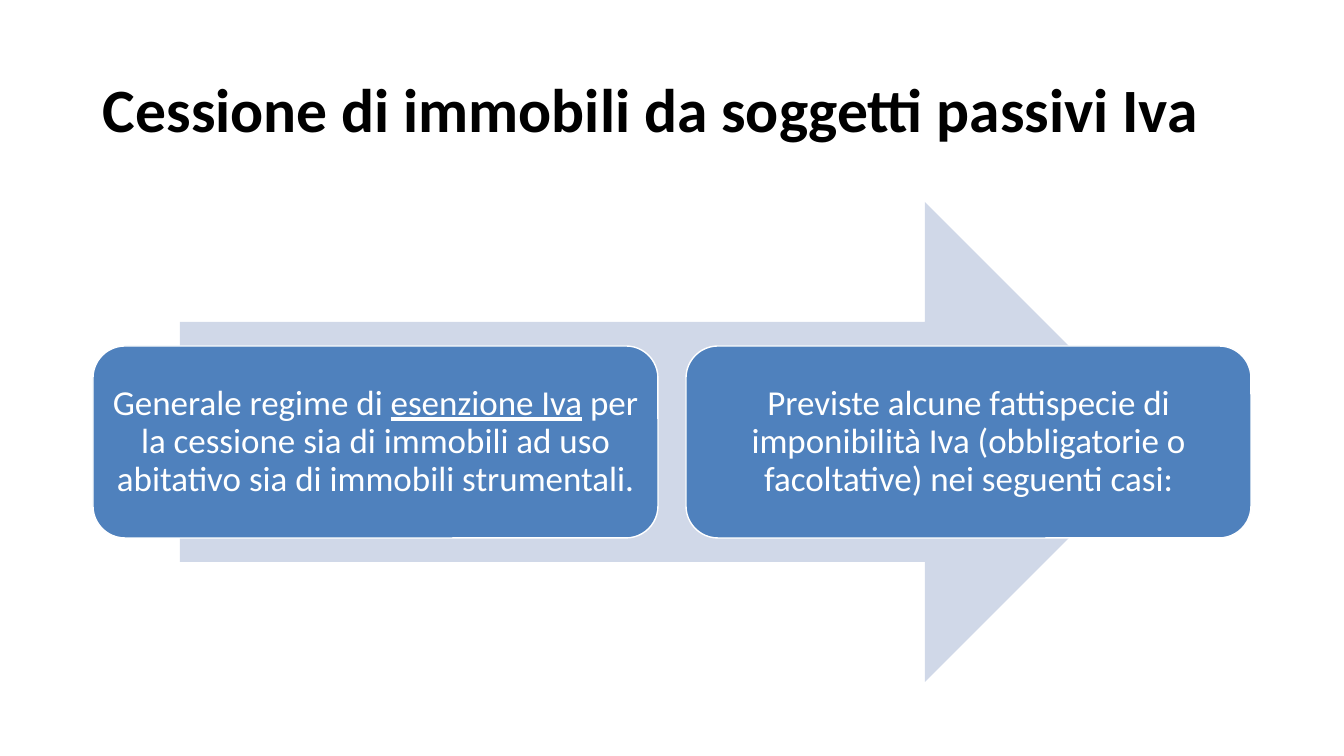
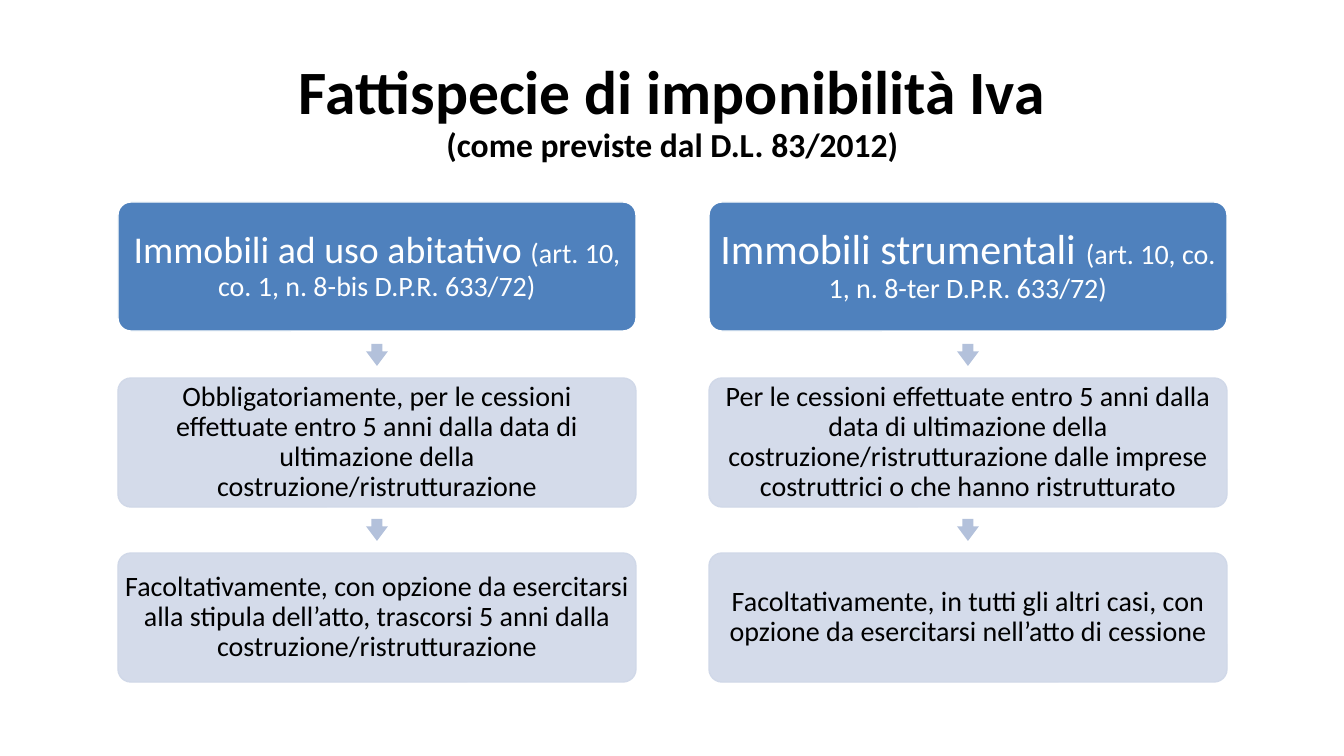
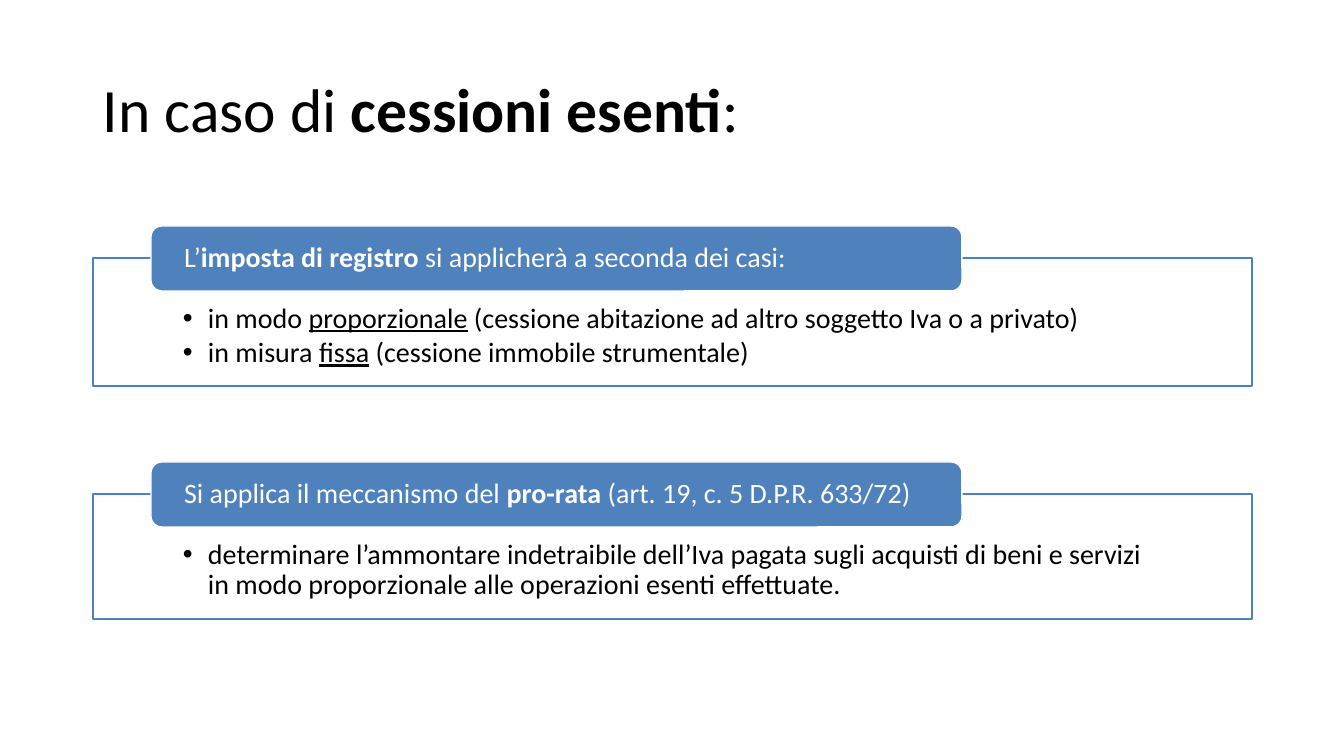
from dataclasses import dataclass

from lxml.etree import SubElement
from pptx import Presentation
from pptx.dml.color import RGBColor
from pptx.enum.shapes import MSO_SHAPE
from pptx.enum.text import MSO_ANCHOR, MSO_AUTO_SIZE, PP_ALIGN
from pptx.oxml.ns import qn
from pptx.util import Pt

EMU_PER_PX = 12192000 / 1344
PAGE_WIDTH, PAGE_HEIGHT = 1344, 756
TITLE_ONLY = 5

BLACK = RGBColor(0x00, 0x00, 0x00)
WHITE = RGBColor(0xFF, 0xFF, 0xFF)
BLUE = RGBColor(0x4F, 0x81, 0xBD)
PALE_BLUE = RGBColor(0xD0, 0xD8, 0xE8)
ARROW_BLUE = RGBColor(0xB3, 0xC1, 0xDB)

FONT = "Calibri"
BOLD = {"bold": True}
UNDERLINED = {"underline": True}


@dataclass
class Box:
    left: int
    top: int
    width: int
    height: int

    def emu(self):
        return [px(side) for side in (self.left, self.top, self.width, self.height)]


TITLE_BOX = Box(93, 40, 1159, 146)
BODY_BOX = Box(93, 202, 1159, 480)
COLUMNS_BOX = Box(118, 202, 1109, 480)


def px(length):
    return round(length * EMU_PER_PX)


def apply(target, values):
    for name, value in values.items():
        setattr(target, name, value)


def set_opacity(color_format_parent, percent):
    for color in color_format_parent.iter(qn("a:srgbClr")):
        SubElement(color, qn("a:alpha"), val=str(percent * 1000))


def write_spans(para, spans, size, color, align):
    """Fill a paragraph; a span is a text, a (text, font values) pair or a line break."""
    apply(para, {"alignment": align, "line_spacing": 0.9})
    for span in spans:
        if span == "\n":
            para.add_line_break()
            continue
        text, values = (span, {}) if isinstance(span, str) else span
        run = para.add_run()
        run.text = text
        apply(run.font, {"name": FONT, "size": Pt(size), **values})
        run.font.color.rgb = color


def set_frame(frame, margins, anchor=MSO_ANCHOR.MIDDLE):
    left, top, right, bottom = (px(margin) for margin in margins)
    apply(frame, {
        "word_wrap": True, "auto_size": MSO_AUTO_SIZE.NONE, "vertical_anchor": anchor,
        "margin_left": left, "margin_top": top,
        "margin_right": right, "margin_bottom": bottom,
    })


def add_bullet(para):
    properties = para._p.get_or_add_pPr()
    properties.set("marL", str(px(25)))
    properties.set("indent", str(-px(25)))
    SubElement(properties, qn("a:buFont"), typeface="Arial")
    SubElement(properties, qn("a:buChar"), char="•")


def add_figure(page, kind, box, fill, line=None, adjustments=(), opacity=100):
    figure = page.shapes.add_shape(kind, *box.emu())
    figure.shadow.inherit = False
    figure.fill.solid()
    figure.fill.fore_color.rgb = fill
    if line is None:
        figure.line.fill.background()
    else:
        figure.line.color.rgb = line
        figure.line.width = Pt(1)
    for index, value in enumerate(adjustments):
        figure.adjustments[index] = value
    if opacity < 100:
        set_opacity(figure.fill._xPr.find(qn("a:solidFill")), opacity)
    return figure


def add_card(page, box, spans, size, margins, color=WHITE, align=PP_ALIGN.CENTER, **look):
    """Add a rounded box with one paragraph, blue with a white edge by default."""
    look = {"fill": BLUE, "line": WHITE, **look}
    card = add_figure(page, MSO_SHAPE.ROUNDED_RECTANGLE, box, **look)
    set_frame(card.text_frame, margins)
    write_spans(card.text_frame.paragraphs[0], spans, size, color, align)


def add_page(deck, title_spans, align=PP_ALIGN.LEFT):
    page = deck.slides.add_slide(deck.slide_layouts[TITLE_ONLY])
    title = page.shapes.title
    apply(title, dict(zip(("left", "top", "width", "height"), TITLE_BOX.emu())))
    set_frame(title.text_frame, (10, 5, 10, 5))
    write_spans(title.text_frame.paragraphs[0], title_spans, 44, BLACK, align)
    return page


def add_arrow_process(page, box, steps):
    """Lay equal cards in a row across a wide arrow."""
    inset, gap = round(box.width * 0.075), 28
    add_figure(page, MSO_SHAPE.RIGHT_ARROW,
               Box(box.left + inset, box.top, box.width - 2 * inset, box.height), PALE_BLUE)
    width = (box.width - gap * (len(steps) - 1)) // len(steps)
    height = round(box.height * 0.4)
    top = box.top + (box.height - height) // 2
    for index, spans in enumerate(steps):
        left = box.left + index * (width + gap)
        add_card(page, Box(left, top, width, height), spans, 25, (10, 10, 10, 10))


def add_column(page, box, heading, steps):
    """Stack a heading and its steps, with a small arrow in each gap."""
    height, arrow = 129, 22
    gap = (box.height - height * (len(steps) + 1)) / len(steps)
    add_card(page, Box(box.left, box.top, box.width, height), heading, 20, (4, 4, 4, 4),
             adjustments=[0.1])
    for index, text in enumerate(steps, start=1):
        top = round(box.top + index * (height + gap))
        add_figure(page, MSO_SHAPE.DOWN_ARROW,
                   Box(box.left + (box.width - arrow) // 2,
                       round(top - (gap + arrow) / 2), arrow, arrow),
                   ARROW_BLUE, adjustments=[0.5, 0.667])
        add_card(page, Box(box.left, top, box.width, height), [text], 20, (3, 3, 3, 3),
                 color=BLACK, fill=PALE_BLUE, line=PALE_BLUE, adjustments=[0.1], opacity=90)


def add_columns(page, box, columns):
    width = 518
    pitch = (box.width - width) // (len(columns) - 1)
    for index, (heading, steps) in enumerate(columns):
        column_box = Box(box.left + index * pitch, box.top, width, box.height)
        add_column(page, column_box, heading, steps)


def add_panel(page, box, heading, items):
    """Add an outlined bullet panel with a heading card over its top edge."""
    panel = add_figure(page, MSO_SHAPE.RECTANGLE, box, WHITE, BLUE, opacity=90)
    frame = panel.text_frame
    set_frame(frame, (90, 46, 90, 16), MSO_ANCHOR.TOP)
    for index, spans in enumerate(items):
        para = frame.add_paragraph() if index else frame.paragraphs[0]
        write_spans(para, spans, 20, BLACK, PP_ALIGN.LEFT)
        para.space_after = Pt(3)
        add_bullet(para)
    heading_box = Box(box.left + round(box.width * 0.05), box.top - 32,
                      round(box.width * 0.7), 65)
    add_card(page, heading_box, heading, 20, (30, 0, 30, 0), align=PP_ALIGN.LEFT)


def build_sale_page(deck):
    page = add_page(deck, [("Cessione di immobili da soggetti passivi Iva", BOLD)])
    add_arrow_process(page, BODY_BOX, [
        ["Generale regime di ", ("esenzione Iva", UNDERLINED),
         " per la cessione sia di immobili ad uso abitativo sia di immobili strumentali."],
        ["Previste alcune fattispecie di imponibilità Iva (obbligatorie o facoltative) "
         "nei seguenti casi:"],
    ])


def build_taxable_page(deck):
    page = add_page(deck, [
        ("Fattispecie di imponibilità Iva", BOLD), "\n",
        ("(come previste dal D.L. 83/2012)", {**BOLD, "size": Pt(24)}),
    ], PP_ALIGN.CENTER)
    add_columns(page, COLUMNS_BOX, [
        ([("Immobili ad uso abitativo ", {"size": Pt(27)}),
          "(art. 10, co. 1, n. 8-bis D.P.R. 633/72)"],
         ["Obbligatoriamente, per le cessioni effettuate entro 5 anni dalla data di "
          "ultimazione della costruzione/ristrutturazione",
          "Facoltativamente, con opzione da esercitarsi alla stipula dell’atto, "
          "trascorsi 5 anni dalla costruzione/ristrutturazione"]),
        ([("Immobili strumentali ", {"size": Pt(30)}),
          "(art. 10, co. 1, n. 8-ter D.P.R. 633/72)"],
         ["Per le cessioni effettuate entro 5 anni dalla data di ultimazione della "
          "costruzione/ristrutturazione dalle imprese costruttrici o che hanno ristrutturato",
          "Facoltativamente, in tutti gli altri casi, con opzione da esercitarsi "
          "nell’atto di cessione"]),
    ])


def build_exempt_page(deck):
    page = add_page(deck, ["In caso di ", ("cessioni esenti", BOLD), ":"])
    add_panel(
        page, Box(BODY_BOX.left, 258, BODY_BOX.width, 128),
        ["L’", ("imposta di registro", BOLD), " si applicherà a seconda dei casi:"],
        [["in modo ", ("proporzionale", UNDERLINED),
          " (cessione abitazione ad altro soggetto Iva o a privato)"],
         ["in misura ", ("fissa", UNDERLINED), " (cessione immobile strumentale)"]])
    add_panel(
        page, Box(BODY_BOX.left, 494, BODY_BOX.width, 125),
        ["Si applica il meccanismo del ", ("pro-rata ", BOLD),
         "(art. 19, c. 5 D.P.R. 633/72)"],
        [["determinare l’ammontare indetraibile dell’Iva pagata sugli acquisti di beni e "
          "servizi in modo proporzionale alle operazioni esenti effettuate."]])


def main():
    deck = Presentation()
    deck.slide_width, deck.slide_height = px(PAGE_WIDTH), px(PAGE_HEIGHT)
    for build in (build_sale_page, build_taxable_page, build_exempt_page):
        build(deck)
    deck.save("out.pptx")


if __name__ == "__main__":
    main()
